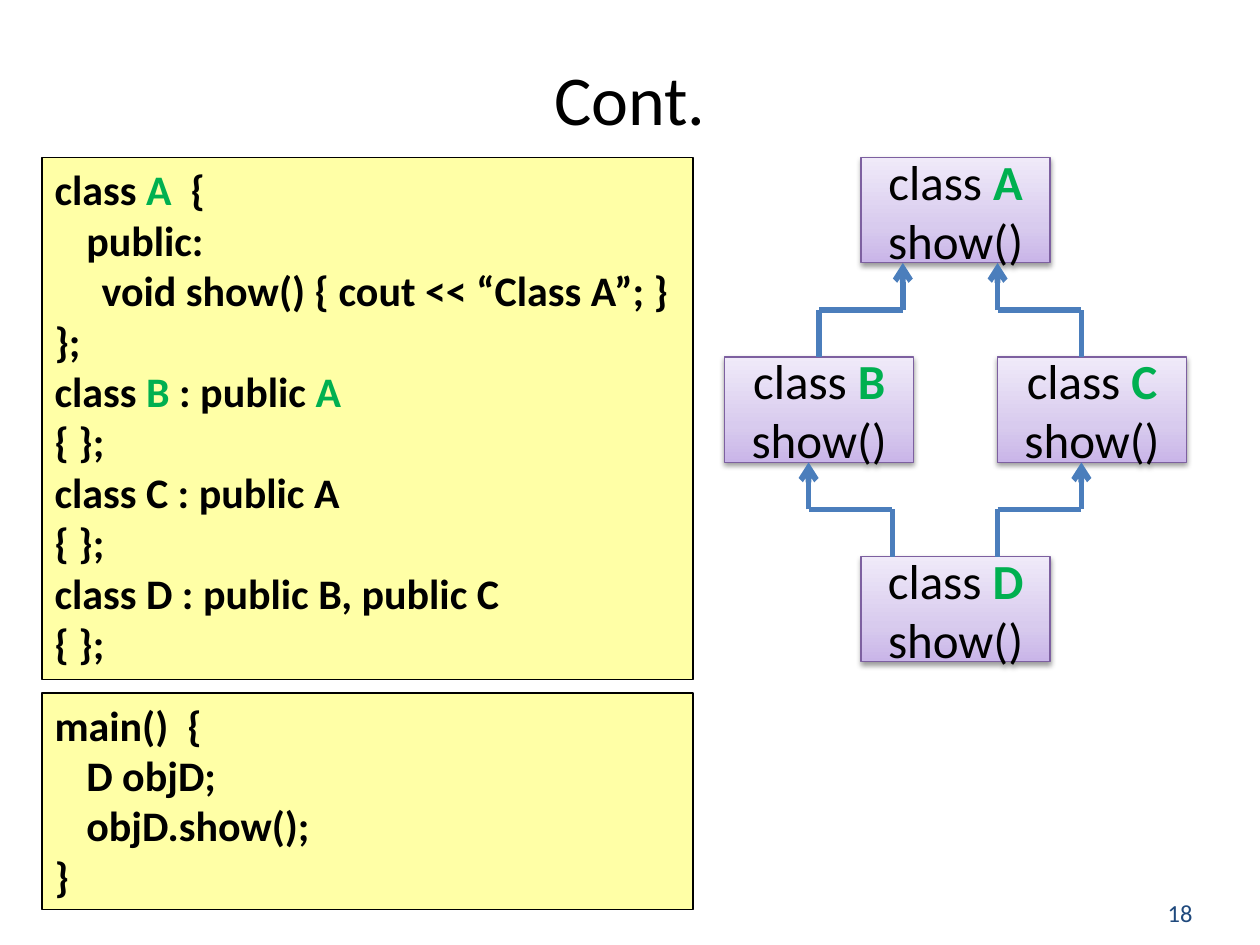
from lxml.etree import SubElement
from pptx import Presentation
from pptx.dml.color import RGBColor
from pptx.enum.shapes import MSO_CONNECTOR, MSO_SHAPE
from pptx.enum.text import MSO_ANCHOR, MSO_AUTO_SIZE, PP_ALIGN
from pptx.oxml.ns import qn
from pptx.util import Cm, Pt

RECTANGLE = MSO_SHAPE.RECTANGLE
STRAIGHT = MSO_CONNECTOR.STRAIGHT
TOP, MIDDLE = MSO_ANCHOR.TOP, MSO_ANCHOR.MIDDLE
LEFT, CENTER = PP_ALIGN.LEFT, PP_ALIGN.CENTER
GROW = MSO_AUTO_SIZE.SHAPE_TO_FIT_TEXT

COLORS = {
    "text": "000000",
    "accent": "00B050",
    "number": "1F497D",
    "code": "FFFF00",
    "border": "7D60A0",
    "arrow": "4B7EBC",
}
GRADIENT = [(0, "C9B5E8"), (35, "D8CBEE"), (100, "F0EAF9")]

BOX_WIDTH, BOX_HEIGHT = 3.81, 2.12
DIAGRAM_TOP, ROW_STEP = 3.18, 4.02
CENTER_LEFT, SIDE_OFFSET = 17.36, 2.75

CLASS_BOXES = [("A", 0, 0), ("B", -1, 1), ("C", 1, 1), ("D", 0, 2)]
INHERITANCE = [(0, 16.51, 18.2), (0, 21.8, 20.11), (1, 17.99, 16.3), (1, 20.11, 21.8)]

CLASS_CODE = [
    (0, "class |A|  {"),
    (0.64, "public:"),
    (0.95, "void show() { cout << “Class A”; }"),
    (0, "};"),
    (0, "class |B| : public |A|"),
    (0, "{ };"),
    (0, "class C : public A"),
    (0, "{ };"),
    (0, "class D : public B, public C"),
    (0, "{ };"),
]
MAIN_CODE = [
    (0, "main()  {"),
    (0.64, "D objD;"),
    (0.64, "objD.show();"),
    (0, "}"),
]


class SlideBuilder:
    """Draws styled elements on the current slide."""

    def __init__(self, slide, font="Calibri"):
        self.slide = slide
        self.font = font

    def color(self, name):
        return RGBColor.from_string(COLORS[name])

    def fill_text(self, shape, lines, size, color="text", bold=False, align=LEFT, anchor=MIDDLE):
        frame = shape.text_frame
        for name, value in {"word_wrap": True, "vertical_anchor": anchor}.items():
            setattr(frame, name, value)
        for index, (indent, line) in enumerate(lines):
            paragraph = frame.add_paragraph() if index else frame.paragraphs[0]
            paragraph.alignment = align
            if indent:
                paragraph._p.get_or_add_pPr().set("marL", str(Cm(indent)))
            for position, text in enumerate(filter(None, line.split("|"))):
                accented = position % 2 == 1
                run = paragraph.add_run()
                run.text = text
                values = {"name": self.font, "size": Pt(size), "bold": bold or accented}
                for name, value in values.items():
                    setattr(run.font, name, value)
                run.font.color.rgb = self.color("accent" if accented else color)

    def label(self, text, left, top, width, height, **style):
        shape = self.slide.shapes.add_textbox(Cm(left), Cm(top), Cm(width), Cm(height))
        self.fill_text(shape, [(0, text)], **style)

    def rectangle(self, left, top, width, height, border):
        shape = self.slide.shapes.add_shape(RECTANGLE, Cm(left), Cm(top), Cm(width), Cm(height))
        shape.line.color.rgb = self.color(border)
        shape.line.width = Pt(0.75)
        shape.shadow.inherit = False
        return shape

    def code_box(self, lines, top, height):
        shape = self.rectangle(0.85, top, 13.12, height, "text")
        shape.fill.solid()
        shape.fill.fore_color.rgb = self.color("code")
        fill = shape._element.spPr.find(qn("a:solidFill"))
        SubElement(fill[0], qn("a:alpha"), val="35000")
        self.fill_text(shape, lines, size=24, bold=True, anchor=TOP)
        shape.text_frame.auto_size = GROW

    def class_box(self, name, column, row):
        left = CENTER_LEFT + column * SIDE_OFFSET
        top = DIAGRAM_TOP + row * ROW_STEP
        shape = self.rectangle(left, top, BOX_WIDTH, BOX_HEIGHT, "border")
        shape.fill.gradient()
        shape.fill.gradient_angle = 90
        properties = shape._element.spPr
        stops = properties.find(qn("a:gradFill")).find(qn("a:gsLst"))
        for stop in list(stops):
            stops.remove(stop)
        for position, color in GRADIENT:
            stop = SubElement(stops, qn("a:gs"), pos=str(position * 1000))
            SubElement(stop, qn("a:srgbClr"), val=color)
        shadow = SubElement(
            properties.find(qn("a:effectLst")), qn("a:outerShdw"),
            blurRad=str(Pt(3.1)), dist=str(Pt(1.6)), dir="5400000", rotWithShape="0",
        )
        shade = SubElement(shadow, qn("a:srgbClr"), val=COLORS["text"])
        SubElement(shade, qn("a:alpha"), val="38000")
        self.fill_text(shape, [(0, f"class |{name}"), (0, "show()")], size=28, align=CENTER)

    def line(self, group, start, end, arrow=False):
        points = [Cm(value) for value in (*start, *end)]
        connector = group.shapes.add_connector(STRAIGHT, *points)
        connector.line.color.rgb = self.color("arrow")
        connector.line.width = Pt(3.25)
        properties = connector._element.spPr
        if arrow:
            SubElement(properties.find(qn("a:ln")), qn("a:tailEnd"), type="arrow")
        SubElement(properties, qn("a:effectLst"))

    def inheritance(self, row, child, parent):
        top = DIAGRAM_TOP + row * ROW_STEP + BOX_HEIGHT
        bottom = DIAGRAM_TOP + (row + 1) * ROW_STEP
        middle = (top + bottom) / 2
        group = self.slide.shapes.add_group_shape()
        self.line(group, (parent, middle), (parent, top), arrow=True)
        self.line(group, (child, middle), (parent, middle))
        self.line(group, (child, middle), (child, bottom))


def main():
    presentation = Presentation()
    presentation.slide_width, presentation.slide_height = Cm(25.4), Cm(19.05)
    builder = SlideBuilder(presentation.slides.add_slide(presentation.slide_layouts[6]))
    builder.label("18", 23.29, 17.98, 1.7, 0.84, size=14, color="number")
    builder.label("Cont.", 1.27, 0.97, 22.86, 1.98, size=40, align=CENTER)
    builder.code_box(CLASS_CODE, 3.18, 10.52)
    builder.code_box(MAIN_CODE, 13.97, 4.37)
    for box in CLASS_BOXES:
        builder.class_box(*box)
    for link in INHERITANCE:
        builder.inheritance(*link)
    presentation.save("out.pptx")


if __name__ == "__main__":
    main()
